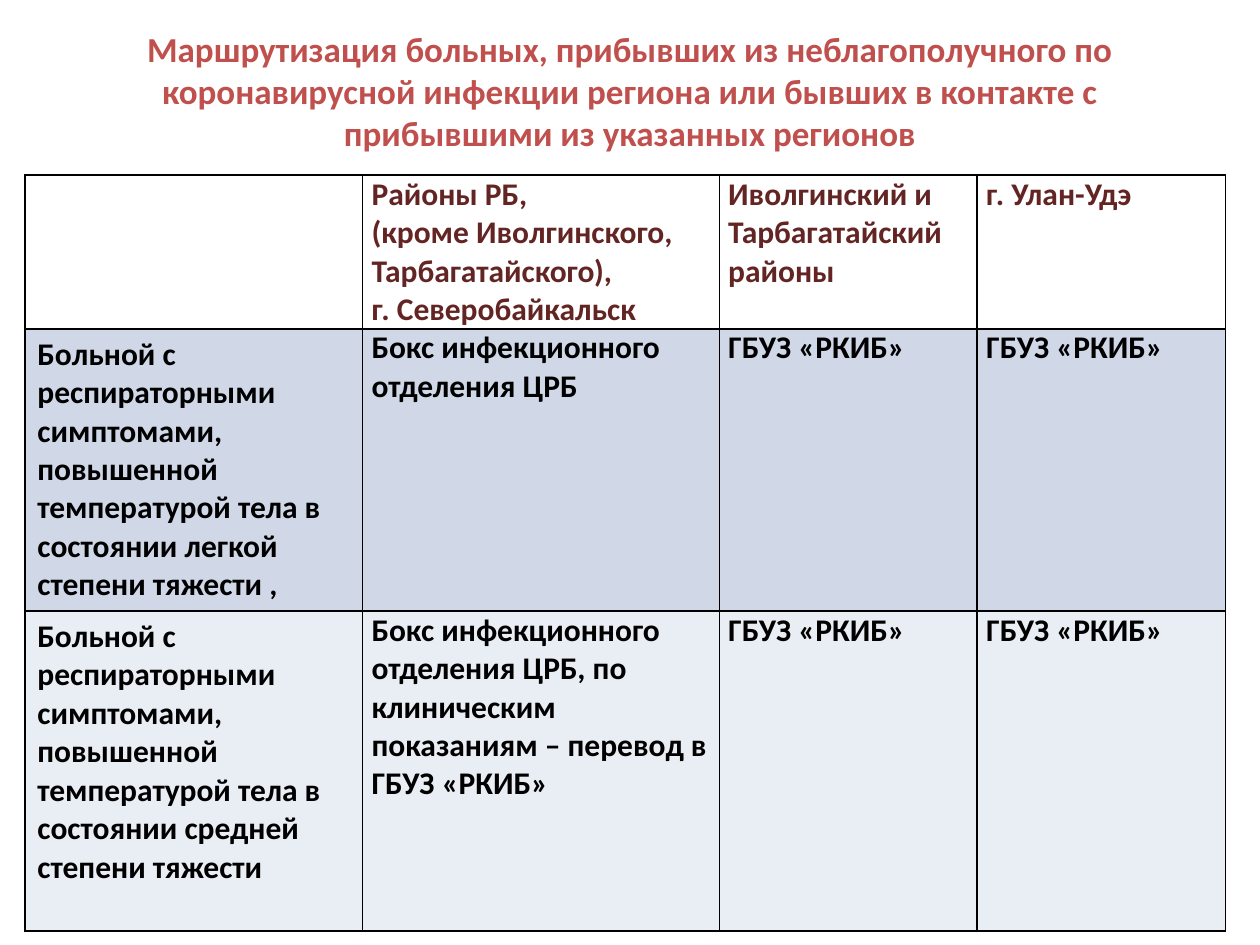
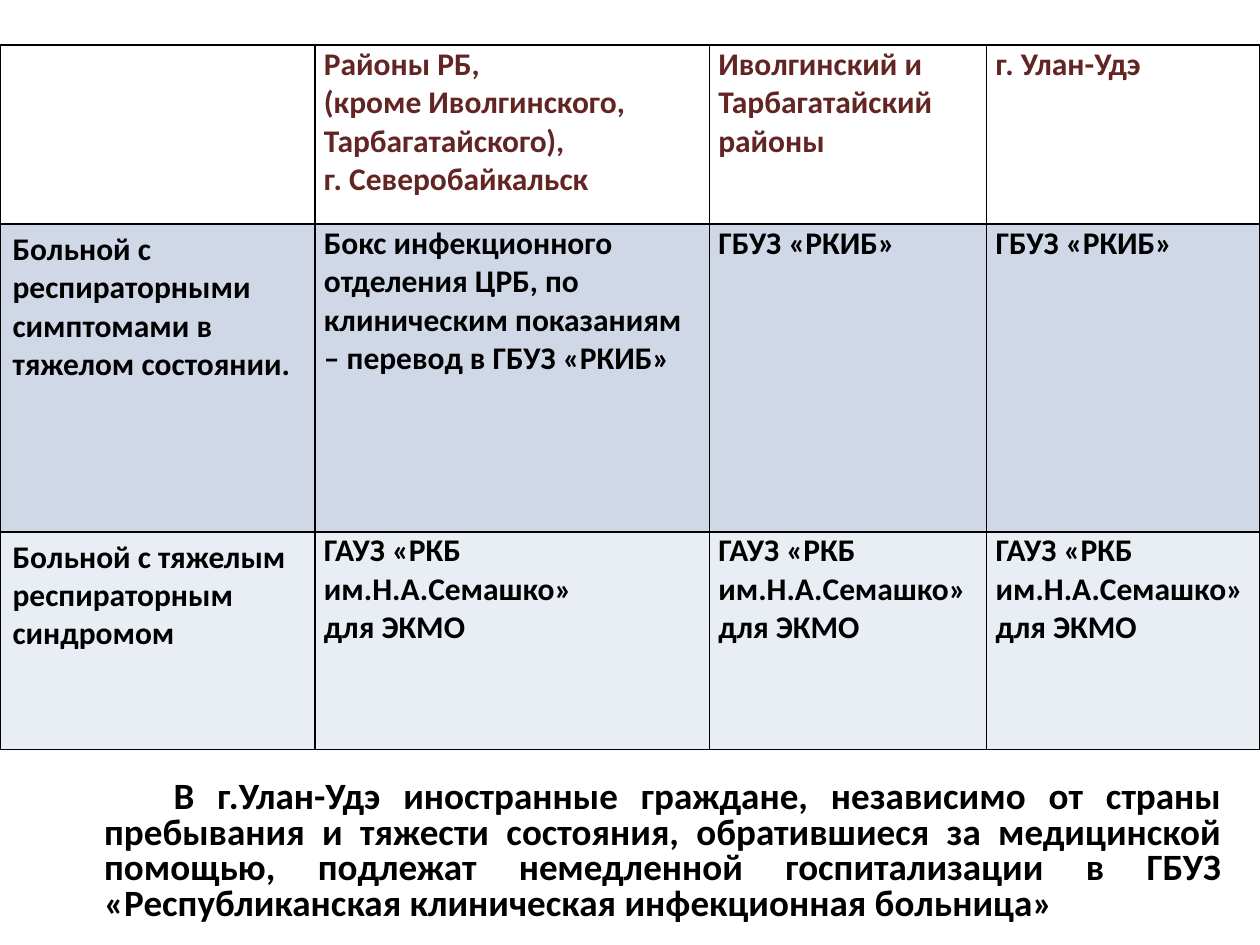
from lxml.etree import fromstring
from pptx import Presentation
from pptx.dml.color import RGBColor
from pptx.enum.text import MSO_ANCHOR, PP_ALIGN
from pptx.util import Cm, Pt

RED = RGBColor(0xC0, 0x50, 0x4D)
MAROON = RGBColor(0x63, 0x25, 0x23)
BLACK = RGBColor(0, 0, 0)
WHITE = RGBColor(0xFF, 0xFF, 0xFF)
BLUE = RGBColor(0xD0, 0xD8, 0xE8)
PALE = RGBColor(0xE9, 0xED, 0xF4)
FILLS = (WHITE, BLUE, PALE)
FONT = "Calibri"
NS = "http://schemas.openxmlformats.org/drawingml/2006/main"

# Wording shared by both tables
HEAD = ["", "Районы РБ,\n(кроме Иволгинского, Тарбагатайского),\nг. Северобайкальск",
        "Иволгинский и Тарбагатайский районы", "г. Улан-Удэ"]
BOX = "Бокс инфекционного отделения ЦРБ"
MOVE = BOX + ", по клиническим показаниям – перевод в ГБУЗ «РКИБ»"
CLINIC = "ГБУЗ «РКИБ»"
ECMO = "ГАУЗ «РКБ им.Н.А.Семашко»\nдля ЭКМО"
SIGNS = ("Больной с респираторными симптомами, повышенной "
         "температурой тела в состоянии ")

TITLE = ("Маршрутизация больных, прибывших из неблагополучного по "
         "коронавирусной инфекции региона или бывших в контакте с "
         "прибывшими из указанных регионов")
NOTE = ("В г.Улан-Удэ иностранные граждане, независимо от страны пребывания и "
        "тяжести состояния, обратившиеся за медицинской помощью, подлежат "
        "немедленной госпитализации в ГБУЗ «Республиканская клиническая "
        "инфекционная больница»")


def write(frame, text, size=18, color=BLACK, align=PP_ALIGN.LEFT,
          space=None, indent=None):
    """Fill a frame with bold text, one paragraph per line."""
    frame.word_wrap = True
    for i, line in enumerate(text.split("\n")):
        para = frame.add_paragraph() if i else frame.paragraphs[0]
        para.alignment = align
        if space:
            para.line_spacing = space
        if indent:
            para._p.get_or_add_pPr().set("indent", str(indent))
        para.font.size = Pt(size)
        if line:
            run = para.add_run()
            run.text = line
            font = run.font
            font.name, font.size, font.bold = FONT, Pt(size), True
            font.color.rgb = color


def add_text(slide, box, text, anchor=MSO_ANCHOR.TOP, **style):
    frame = slide.shapes.add_textbox(*map(Cm, box)).text_frame
    frame.vertical_anchor = anchor
    write(frame, text, **style)


def add_border(cell):
    props = cell._tc.get_or_add_tcPr()
    for i, side in enumerate("LRTB"):
        props.insert(i, fromstring(
            f'<a:ln{side} xmlns:a="{NS}" w="{Pt(1)}"><a:solidFill>'
            f'<a:srgbClr val="{BLACK}"/></a:solidFill></a:ln{side}>'))


def add_grid(slide, left, top, cols, rows, body):
    """Place a routing table; column and row sizes are in centimetres."""
    grid = slide.shapes.add_table(
        len(rows), len(cols), Cm(left), Cm(top),
        Cm(sum(cols)), Cm(sum(rows))).table
    grid.first_row = grid.horz_banding = False
    for col, width in zip(grid.columns, cols):
        col.width = Cm(width)
    for row, height in zip(grid.rows, rows):
        row.height = Cm(height)
    for r, line in enumerate([HEAD] + body):
        for c, text in enumerate(line):
            cell = grid.cell(r, c)
            # The case column keeps the default margins
            if c:
                cell.margin_left = cell.margin_right = Cm(0.18)
                cell.margin_top = cell.margin_bottom = 0
            cell.fill.solid()
            cell.fill.fore_color.rgb = FILLS[r]
            add_border(cell)
            write(cell.text_frame, text, color=BLACK if r else MAROON)


def mild_slide(slide):
    # Title
    add_text(slide, (1.27, 0.33, 22.86, 3), TITLE, anchor=MSO_ANCHOR.MIDDLE,
             size=20, color=RED, align=PP_ALIGN.CENTER)
    # Mild and moderate cases
    add_grid(slide, 0.5, 3.53, (6.81, 7.19, 5.2, 5), (3.1, 5.69, 6.45), [
        [SIGNS + "легкой степени тяжести ,", BOX, CLINIC, CLINIC],
        [SIGNS + "средней степени тяжести", MOVE, CLINIC, CLINIC]])


def severe_slide(slide):
    # Severe cases
    add_grid(slide, 0, 0.91, (6.35, 7.95, 5.59, 5.51), (3.61, 6.2, 4.39), [
        ["Больной с респираторными симптомами в тяжелом состоянии.",
         MOVE, CLINIC, CLINIC],
        ["Больной с тяжелым респираторным синдромом", ECMO, ECMO, ECMO]])
    # Note on foreign citizens
    add_text(slide, (1.85, 15.62, 23.04, 3.1), NOTE, size=21.2,
             align=PP_ALIGN.JUSTIFY, space=0.8, indent=Cm(1.4))


def main():
    deck = Presentation()
    deck.slide_width, deck.slide_height = Cm(25.4), Cm(19.05)
    for build in (mild_slide, severe_slide):
        build(deck.slides.add_slide(deck.slide_layouts[6]))
    deck.save("out.pptx")


if __name__ == "__main__":
    main()
